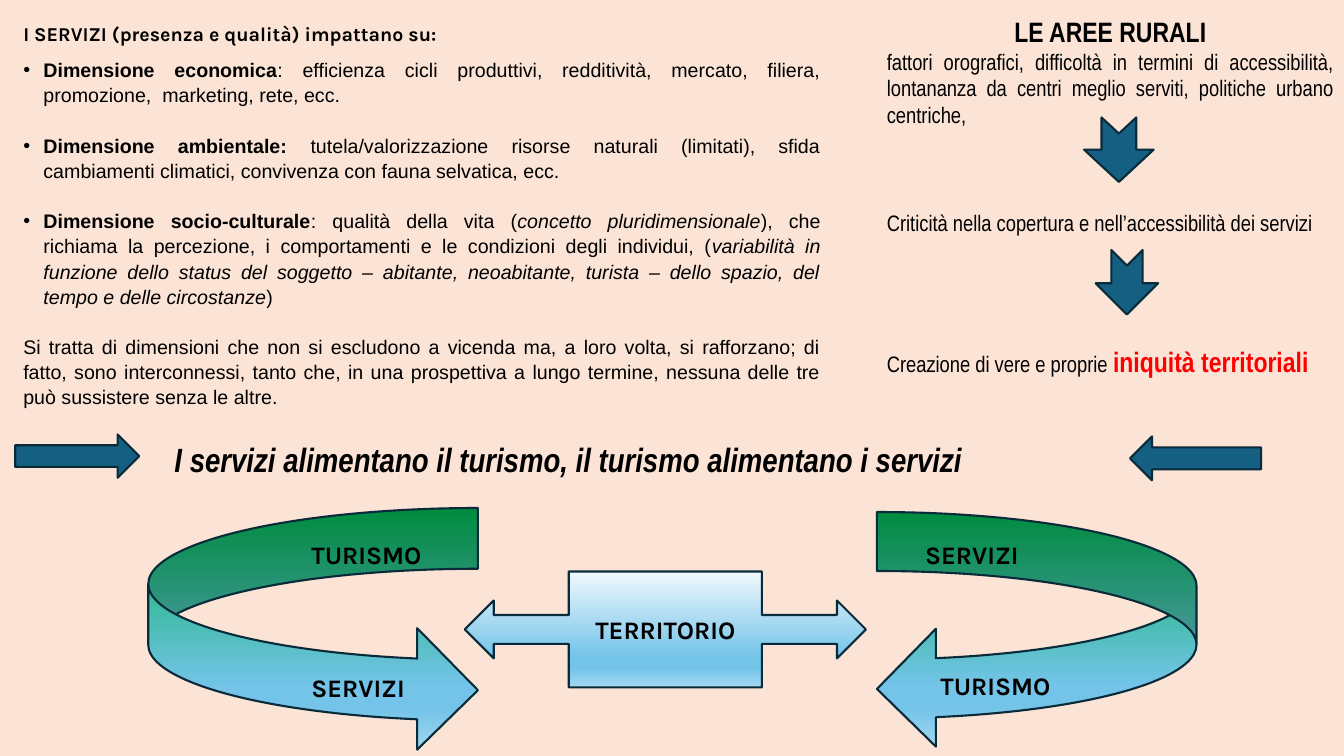
from lxml import etree
from pptx import Presentation
from pptx.dml.color import RGBColor
from pptx.enum.shapes import MSO_SHAPE
from pptx.enum.text import MSO_ANCHOR, MSO_AUTO_SIZE, PP_ALIGN
from pptx.oxml.ns import qn
from pptx.util import Inches, Pt

SLIDE_WIDTH, SLIDE_HEIGHT = Inches(13.33), Inches(7.5)
TITLE_AND_CONTENT = 1

LEFT, CENTER, JUSTIFY = PP_ALIGN.LEFT, PP_ALIGN.CENTER, PP_ALIGN.JUSTIFY
TOP, MIDDLE = MSO_ANCHOR.TOP, MSO_ANCHOR.MIDDLE
NO_AUTOFIT = MSO_AUTO_SIZE.NONE
RIGHT_ARROW = MSO_SHAPE.RIGHT_ARROW
NOTCHED_ARROW = MSO_SHAPE.NOTCHED_RIGHT_ARROW
CURVED_RIGHT = MSO_SHAPE.CURVED_RIGHT_ARROW
CURVED_LEFT = MSO_SHAPE.CURVED_LEFT_ARROW
ARROW_CALLOUT = MSO_SHAPE.LEFT_RIGHT_ARROW_CALLOUT

PEACH = RGBColor(0xFB, 0xE3, 0xD6)
BLACK = RGBColor(0x00, 0x00, 0x00)
RED = RGBColor(0xFF, 0x00, 0x00)
TEAL = RGBColor(0x15, 0x60, 0x82)
NAVY = RGBColor(0x09, 0x2A, 0x39)
GREEN = RGBColor(0x00, 0xB0, 0x50)
SKY = RGBColor(0x74, 0xC4, 0xE9)
PALE_SKY = RGBColor(0xA2, 0xD8, 0xF0)
ICE = RGBColor(0xF0, 0xF8, 0xFD)

BOLD, ITALIC = {"bold": True}, {"italic": True}
LABEL = {"font": "Karla", "size": 18, "bold": True}
LABEL_SIZE = (10.6, 5.33)

DIMENSIONS = [
    [("Dimensione economica", BOLD),
     (": efficienza cicli produttivi, redditività, mercato, filiera, "
      "promozione,  marketing, rete, ecc.", {})],
    [("Dimensione ambientale: ", BOLD),
     ("tutela/valorizzazione risorse naturali (limitati), sfida cambiamenti "
      "climatici, convivenza con fauna selvatica, ecc.", {})],
    [("Dimensione socio-culturale", BOLD),
     (": qualità della vita (", {}),
     ("concetto pluridimensionale", ITALIC),
     ("), che richiama la percezione, i comportamenti e le condizioni degli "
      "individui, (", {}),
     ("variabilità in funzione dello status del soggetto – abitante, "
      "neoabitante, turista – dello spazio, del tempo e delle circostanze",
      ITALIC),
     (")", {})],
]
CONCLUSION = (
    "Si tratta di dimensioni che non si escludono a vicenda ma, a loro volta, "
    "si rafforzano; di fatto, sono interconnessi, tanto che, in una "
    "prospettiva a lungo termine, nessuna delle tre può sussistere senza le altre.")
RURAL_FACTORS = (
    "fattori orografici, difficoltà in termini di accessibilità, lontananza "
    "da centri meglio serviti, politiche urbano centriche,")

CYCLE_LABELS = [
    ("TURISMO", 22.43, 70.67), ("SERVIZI", 22.43, 88.27),
    ("SERVIZI", 68.1, 70.67), ("TURISMO", 69.23, 88),
]
CYCLE_ARROWS = [
    (CURVED_RIGHT, (11.03, 67.2, 24.53, 32.13)),
    (CURVED_LEFT, (65.25, 67.73, 23.78, 31.2)),
]
PLAIN_ARROWS = [
    (RIGHT_ARROW, (1.13, 57.47, 9.23, 5.73), 0),
    (RIGHT_ARROW, (84.08, 57.73, 9.75, 5.8), 180),
    (NOTCHED_ARROW, (80.85, 15.2, 4.8, 9.2), 90),
    (NOTCHED_ARROW, (81.45, 33.2, 4.8, 8.27), 90),
]


def area(left, top, width, height):
    """Turn percentages of the slide into lengths."""
    return (int(SLIDE_WIDTH * left / 100), int(SLIDE_HEIGHT * top / 100),
            int(SLIDE_WIDTH * width / 100), int(SLIDE_HEIGHT * height / 100))


def write(frame, content, font="Arial", size=14, color=BLACK, bold=False,
          italic=False, align=LEFT, spacing=1.0, after=0, bullet=False):
    """Add a paragraph made of a string or of (text, overrides) pairs."""
    paragraph = frame.paragraphs[0]
    if paragraph.runs:
        paragraph = frame.add_paragraph()
    paragraph.alignment = align
    paragraph.line_spacing = spacing
    paragraph.space_before, paragraph.space_after = Pt(0), Pt(after)
    properties = paragraph._p.get_or_add_pPr()
    indent = Inches(0.2) if bullet else 0
    properties.set("marL", str(indent))
    properties.set("indent", str(-indent))
    if bullet:
        etree.SubElement(properties, qn("a:buChar")).set("char", "•")
    else:
        etree.SubElement(properties, qn("a:buNone"))
    base = {"font": font, "size": size, "color": color,
            "bold": bold, "italic": italic}
    pieces = [(content, {})] if isinstance(content, str) else content
    for text, overrides in pieces:
        style = {**base, **overrides}
        run = paragraph.add_run()
        run.text = text
        run.font.name = style["font"]
        run.font.size = Pt(style["size"])
        run.font.color.rgb = style["color"]
        run.font.bold = style["bold"]
        run.font.italic = style["italic"]


def prepare_placeholder(placeholder, position):
    """Move a placeholder and return its text frame, ready for writing."""
    (placeholder.left, placeholder.top,
     placeholder.width, placeholder.height) = area(*position)
    frame = placeholder.text_frame
    frame.word_wrap, frame.auto_size = True, NO_AUTOFIT
    frame.vertical_anchor = TOP
    return frame


def add_text_box(slide, position):
    """Add a wrapping text box and return its text frame."""
    frame = slide.shapes.add_textbox(*area(*position)).text_frame
    frame.word_wrap = True
    return frame


def add_outlined_shape(slide, kind, position, rotation=0):
    """Add a preset shape with the dark outline."""
    shape = slide.shapes.add_shape(kind, *area(*position))
    shape.rotation = rotation
    shape.shadow.inherit = False
    shape.line.color.rgb = NAVY
    shape.line.width = Pt(1.5)
    return shape


def fill_gradient(shape, first_color):
    """Fill a shape from the first colour down to sky blue."""
    shape.fill.gradient()
    shape.fill.gradient_angle = 270
    stops = shape._element.spPr.find(".//" + qn("a:gsLst"))
    for stop in list(stops):
        stops.remove(stop)
    for percent, color in ((0, first_color), (74, SKY), (83, SKY), (100, PALE_SKY)):
        stop = etree.SubElement(stops, qn("a:gs"), pos=str(percent * 1000))
        etree.SubElement(stop, qn("a:srgbClr"), val=str(color))


def add_dimensions(slide):
    """Fill the body placeholder with the dimensions of the services."""
    frame = prepare_placeholder(slide.placeholders[1], (0.98, 2, 60.83, 53.07))
    layout = {"align": JUSTIFY, "spacing": 1.07}
    write(frame, "I SERVIZI (presenza e qualità) impattano su:",
          font="Karla", bold=True, after=8, **layout)
    for dimension in DIMENSIONS:
        write(frame, dimension, after=18, bullet=True, **layout)
    write(frame, CONCLUSION, **layout)


def add_rural_areas(slide):
    """Write the column about rural areas."""
    frame = add_text_box(slide, (65.25, 1.2, 34.73, 49.87))
    narrow = {"font": "Arial Narrow", "size": 16, "align": JUSTIFY}
    write(frame, "LE AREE RURALI", font="Arial Narrow", size=20, bold=True,
          align=CENTER)
    write(frame, RURAL_FACTORS, after=58, **narrow)
    write(frame, "Criticità nella copertura e nell’accessibilità dei servizi",
          after=77, **narrow)
    write(frame, [("Creazione di vere e proprie ", {}),
                  ("iniquità territoriali",
                   {"size": 20, "color": RED, "bold": True})], **narrow)


def add_cycle(slide):
    """Draw the two curved arrows, their labels and the territory."""
    for kind, position in CYCLE_ARROWS:
        fill_gradient(add_outlined_shape(slide, kind, position), GREEN)
    for text, left, top in CYCLE_LABELS:
        write(add_text_box(slide, (left, top, *LABEL_SIZE)), text, **LABEL)
    territory = add_outlined_shape(slide, ARROW_CALLOUT, (34.58, 75.6, 29.85, 15.33))
    fill_gradient(territory, ICE)
    territory.text_frame.vertical_anchor = MIDDLE
    write(territory.text_frame, "TERRITORIO", align=CENTER, **LABEL)


def main():
    """Build the slide and save it."""
    presentation = Presentation()
    presentation.slide_width, presentation.slide_height = SLIDE_WIDTH, SLIDE_HEIGHT
    slide = presentation.slides.add_slide(
        presentation.slide_layouts[TITLE_AND_CONTENT])
    slide.background.fill.solid()
    slide.background.fill.fore_color.rgb = PEACH
    add_dimensions(slide)
    title = prepare_placeholder(slide.shapes.title, (12.23, 57.07, 74.48, 6.93))
    write(title, "I servizi alimentano il turismo, il turismo alimentano i servizi",
          font="Arial Narrow", size=24, bold=True, italic=True,
          align=JUSTIFY, spacing=1.07)
    add_cycle(slide)
    add_rural_areas(slide)
    for kind, position, rotation in PLAIN_ARROWS:
        arrow = add_outlined_shape(slide, kind, position, rotation)
        arrow.fill.solid()
        arrow.fill.fore_color.rgb = TEAL
    presentation.save("out.pptx")


if __name__ == "__main__":
    main()
